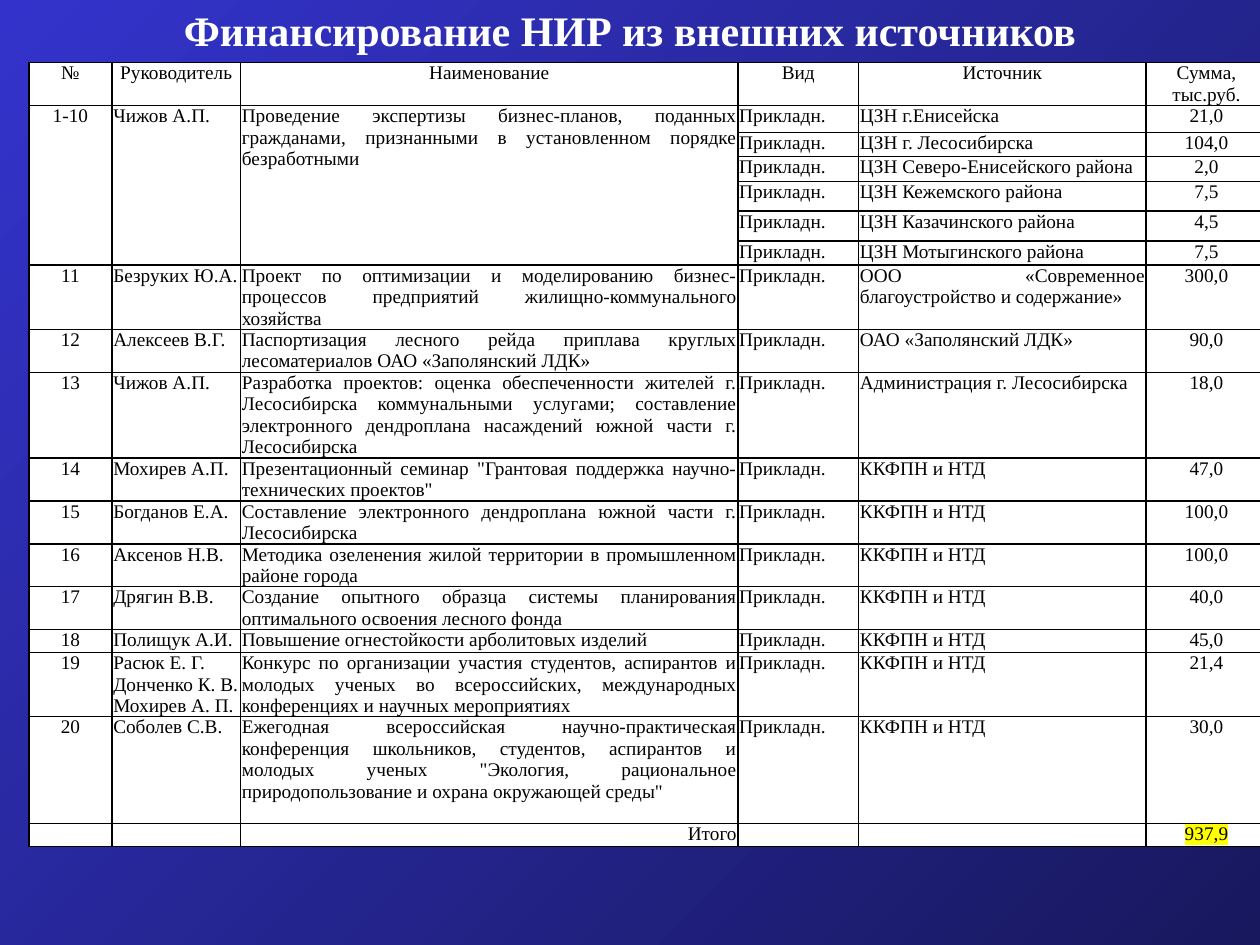
from lxml.etree import SubElement
from pptx import Presentation
from pptx.dml.color import RGBColor
from pptx.enum.text import MSO_ANCHOR, PP_ALIGN
from pptx.oxml.ns import qn
from pptx.util import Pt

KIND = "Прикладн."
FUND = "ККФПН и НТД"
HEADER = ("№", "Руководитель", "Наименование", "Вид", "Источник", "Сумма, тыс.руб.")
EXPERTISE = ("1-10", "Чижов А.П.", "Проведение экспертизы бизнес-планов, поданных гражданами, "
             "признанными в установленном порядке безработными")
CENTRES = (
    ("ЦЗН г.Енисейска", "21,0"),
    ("ЦЗН г. Лесосибирска", "104,0"),
    ("ЦЗН Северо-Енисейского района", "2,0"),
    ("ЦЗН Кежемского района", "7,5"),
    ("ЦЗН Казачинского района", "4,5"),
    ("ЦЗН Мотыгинского района", "7,5"),
)
PROJECTS = (
    ("Безруких Ю.А.", "Проект по оптимизации и моделированию бизнес-процессов предприятий "
     "жилищно-коммунального хозяйства", "ООО «Современное благоустройство и содержание»", "300,0"),
    ("Алексеев В.Г.", "Паспортизация лесного рейда приплава круглых лесоматериалов "
     "ОАО «Заполянский ЛДК»", "ОАО «Заполянский ЛДК»", "90,0"),
    ("Чижов А.П.", "Разработка проектов: оценка обеспеченности жителей г. Лесосибирска "
     "коммунальными услугами; составление электронного дендроплана насаждений южной части "
     "г. Лесосибирска", "Администрация г. Лесосибирска", "18,0"),
    ("Мохирев А.П.", "Презентационный семинар \"Грантовая поддержка научно-технических проектов\"",
     FUND, "47,0"),
    ("Богданов Е.А.", "Составление электронного дендроплана южной части г. Лесосибирска",
     FUND, "100,0"),
    ("Аксенов Н.В.", "Методика озеленения жилой территории в промышленном районе города",
     FUND, "100,0"),
    ("Дрягин В.В.", "Создание опытного образца системы планирования оптимального освоения "
     "лесного фонда", FUND, "40,0"),
    ("Полищук А.И.", "Повышение огнестойкости арболитовых изделий", FUND, "45,0"),
    ("Расюк Е. Г.\nДонченко К. В.\nМохирев А. П.", "Конкурс по организации участия студентов, "
     "аспирантов и молодых ученых во всероссийских, международных конференциях и научных "
     "мероприятиях", FUND, "21,4"),
    ("Соболев С.В.", "Ежегодная всероссийская научно-практическая конференция школьников, "
     "студентов, аспирантов и молодых ученых \"Экология, рациональное природопользование "
     "и охрана окружающей среды\"", FUND, "30,0"),
)
TOTAL = ("", "", "Итого", "", "", "937,9")
COLUMN_WIDTHS = (47.5, 73.5, 284.25, 69, 164.25, 69)
ROW_HEIGHTS = (24.5, 15.5, 13.75, 14.25, 17, 17, 13.75, 36.75, 24.5, 49,
               24.5, 24.5, 24.5, 24.5, 13, 36.75, 61, 12.5)


def color(value):
    """Turn a hex string into a colour."""
    return RGBColor.from_string(value)


def write(frame, text, size=11, fill="000000", bold=False, align=PP_ALIGN.JUSTIFY,
          font="Times New Roman", highlight=None, line_height=None):
    """Fill a text frame, one paragraph for each line of the text."""
    frame.text = text
    for paragraph in frame.paragraphs:
        paragraph.alignment = align
        if line_height:
            paragraph.line_spacing = Pt(line_height)
        for run in paragraph.runs:
            run.font.size = Pt(size)
            run.font.bold = bold
            run.font.color.rgb = color(fill)
            if highlight:
                mark = SubElement(run.font._element, qn("a:highlight"))
                SubElement(mark, qn("a:srgbClr"), val=highlight)
            run.font.name = font
        if not paragraph.runs:
            SubElement(paragraph._p, qn("a:endParaRPr"), sz=str(size * 100))


class FundingSlide:
    """Hold the style and the slide being built."""

    def __init__(self, slide, paper="FFFFFF", ink="000000", line_height=12.25):
        """Keep the slide, its table colours and the height of a table line."""
        self.slide = slide
        self.paper = paper
        self.ink = ink
        self.line_height = line_height

    def background(self, start, end):
        """Paint a diagonal gradient."""
        fill = self.slide.background.fill
        fill.gradient()
        fill.gradient_angle = 315
        for stop, value in zip(fill.gradient_stops, (start, end)):
            stop.color.rgb = color(value)

    def title(self, text, left, top, width, height):
        """Add the heading."""
        shape = self.slide.shapes.add_textbox(Pt(left), Pt(top), Pt(width), Pt(height))
        frame = shape.text_frame
        frame.word_wrap = True
        frame.vertical_anchor = MSO_ANCHOR.MIDDLE
        write(frame, text, size=24, fill="FFFFFF", bold=True, align=PP_ALIGN.CENTER)

    def cell(self, cell, text, **format):
        """Style one cell and write its text."""
        cell.margin_left = cell.margin_right = Pt(0.75)
        cell.margin_top = cell.margin_bottom = Pt(0)
        properties = cell._tc.get_or_add_tcPr()
        for side in ("a:lnL", "a:lnR", "a:lnT", "a:lnB"):
            border = SubElement(properties, qn(side), w=str(Pt(1)))
            SubElement(SubElement(border, qn("a:solidFill")), qn("a:srgbClr"), val=self.ink)
        cell.fill.solid()
        cell.fill.fore_color.rgb = color(self.paper)
        write(cell.text_frame, text, line_height=self.line_height, **format)

    def table(self, rows, left, top):
        """Add the funding table with its header, body and total."""
        shape = self.slide.shapes.add_table(len(rows), len(COLUMN_WIDTHS), Pt(left), Pt(top),
                                            Pt(sum(COLUMN_WIDTHS)), Pt(sum(ROW_HEIGHTS)))
        table = shape.table
        for column, width in zip(table.columns, COLUMN_WIDTHS):
            column.width = Pt(width)
        for row, height in zip(table.rows, ROW_HEIGHTS):
            row.height = Pt(height)
        last_column = len(COLUMN_WIDTHS) - 1
        for row_index, values in enumerate(rows):
            for column_index, text in enumerate(values):
                align = PP_ALIGN.JUSTIFY
                if values is HEADER or column_index in (0, last_column):
                    align = PP_ALIGN.CENTER
                elif values is TOTAL:
                    align = PP_ALIGN.RIGHT
                highlight = "FFFF00" if values is TOTAL and text == TOTAL[-1] else None
                self.cell(table.cell(row_index, column_index), text,
                          align=align, highlight=highlight)
        for column_index in range(len(EXPERTISE)):
            table.cell(1, column_index).merge(table.cell(len(CENTRES), column_index))


def main():
    """Build and save the presentation."""
    presentation = Presentation()
    presentation.slide_width, presentation.slide_height = Pt(720), Pt(540)
    slide = FundingSlide(presentation.slides.add_slide(presentation.slide_layouts[6]))
    slide.background("3333CC", "18185E")
    slide.title("Финансирование НИР из внешних источников", 54, 0, 612, 34)
    rows = [HEADER]
    for index, (source, amount) in enumerate(CENTRES):
        rows.append((EXPERTISE if index == 0 else ("", "", "")) + (KIND, source, amount))
    for number, (leader, name, source, amount) in enumerate(PROJECTS, start=11):
        rows.append((str(number), leader, name, KIND, source, amount))
    rows.append(TOTAL)
    slide.table(rows, 16.5, 35.75)
    presentation.save("out.pptx")


if __name__ == "__main__":
    main()
